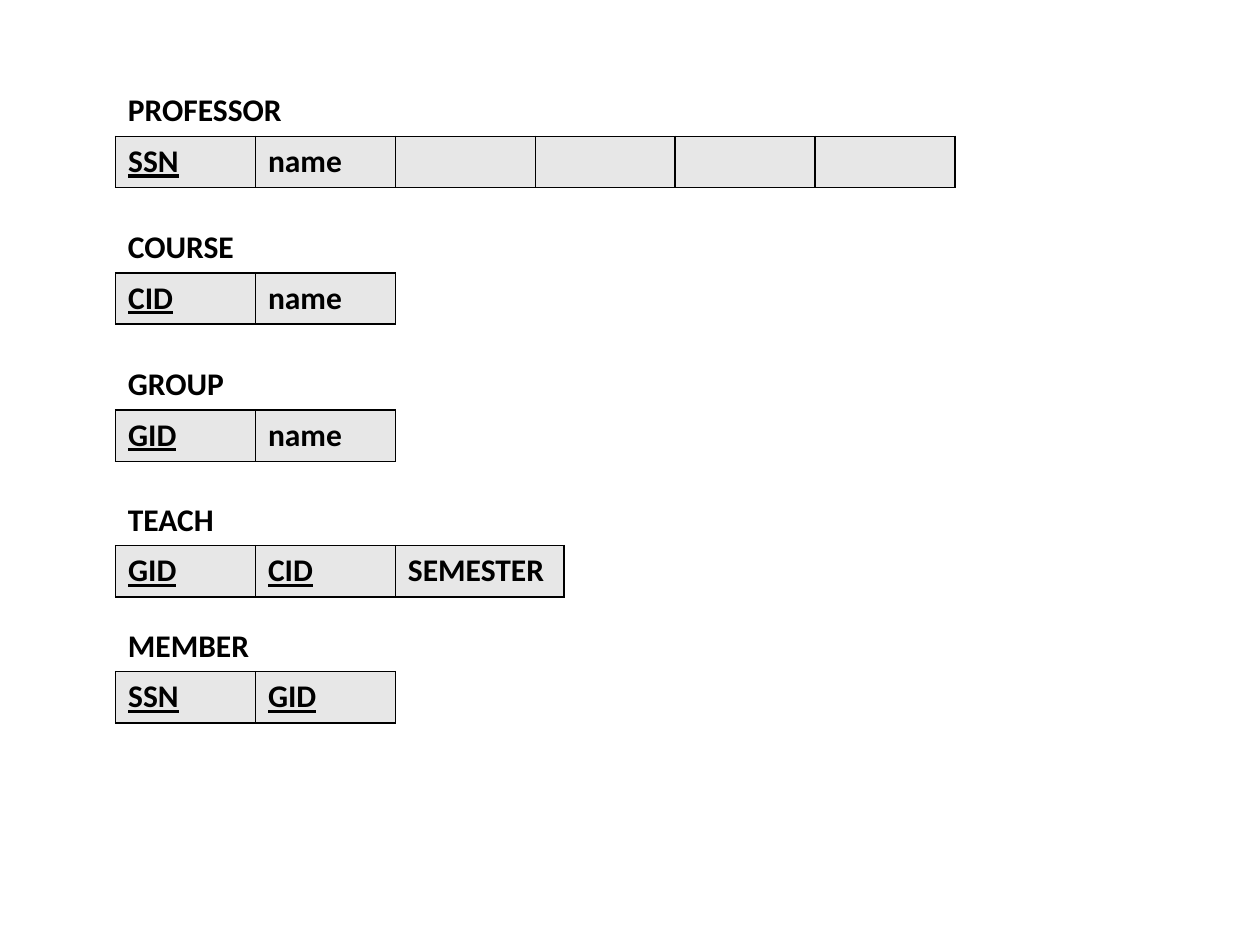
from dataclasses import dataclass

from lxml.etree import SubElement
from pptx import Presentation
from pptx.dml.color import RGBColor
from pptx.enum.text import MSO_AUTO_SIZE
from pptx.oxml.ns import qn
from pptx.util import Cm, Pt


@dataclass(frozen=True)
class Theme:
    font: str = "Calibri"
    size: int = 18
    ink: str = "000000"
    cell: str = "E7E7E7"
    border: float = 1


THEME = Theme()
LEFT = 2.33
LABEL_HEIGHT = 1.02
TABLE_OFFSET = 1.05
ROW_HEIGHT = 1.03
COLUMN = 2.82
WIDE_COLUMN = 3.4

# Name, top, label width, attributes, key attributes, column widths (cm)
RELATIONS = [
    ("PROFESSOR", 1.7, 3.63, ["SSN", "name", "", "", "", ""], {"SSN"}, [COLUMN] * 6),
    ("COURSE", 4.45, 2.67, ["CID", "name"], {"CID"}, [COLUMN] * 2),
    ("GROUP", 7.22, 2.46, ["GID", "name"], {"GID"}, [COLUMN] * 2),
    ("TEACH", 9.95, 2.26, ["GID", "CID", "SEMESTER"], {"GID", "CID"},
     [COLUMN, COLUMN, WIDE_COLUMN]),
    ("MEMBER", 12.49, 2.97, ["SSN", "GID"], {"SSN", "GID"}, [COLUMN] * 2),
]


def write_text(frame, text, size=THEME.size, color=THEME.ink, bold=True, underline=False):
    span = frame.paragraphs[0].add_run()
    span.text = text
    span.font.name = THEME.font
    span.font.size = Pt(size)
    span.font.bold = bold
    span.font.underline = underline
    span.font.color.rgb = RGBColor.from_string(color)


def style_cell(cell):
    """Draw all four borders, then the fill, as the schema orders them."""
    properties = cell._tc.get_or_add_tcPr()
    for side in ("lnL", "lnR", "lnT", "lnB"):
        line = SubElement(properties, qn(f"a:{side}"), w=str(Pt(THEME.border)))
        fill = SubElement(line, qn("a:solidFill"))
        SubElement(fill, qn("a:srgbClr"), val=THEME.ink)
    cell.fill.solid()
    cell.fill.fore_color.rgb = RGBColor.from_string(THEME.cell)


def add_label(page, name, left, top, width):
    box = page.shapes.add_textbox(Cm(left), Cm(top), Cm(width), Cm(LABEL_HEIGHT))
    box.text_frame.word_wrap = False
    box.text_frame.auto_size = MSO_AUTO_SIZE.SHAPE_TO_FIT_TEXT
    write_text(box.text_frame, name)


def add_attributes(page, left, top, attributes, keys, widths):
    """Lay the attributes out in one table row, with the keys underlined."""
    table = page.shapes.add_table(1, len(attributes), Cm(left), Cm(top),
                                  Cm(sum(widths)), Cm(ROW_HEIGHT)).table
    table.first_row = False
    table.horz_banding = False
    for column, width in zip(table.columns, widths):
        column.width = Cm(width)
    for cell, attribute in zip(table.iter_cells(), attributes):
        style_cell(cell)
        if attribute:
            write_text(cell.text_frame, attribute, underline=attribute in keys)


def add_relation(page, left, top, name, label_width, attributes, keys, widths):
    add_attributes(page, left, top + TABLE_OFFSET, attributes, keys, widths)
    add_label(page, name, left, top, label_width)


def main():
    deck = Presentation()
    deck.slide_width, deck.slide_height = Cm(25.4), Cm(19.05)
    page = deck.slides.add_slide(deck.slide_layouts[6])
    for name, top, label_width, attributes, keys, widths in RELATIONS:
        add_relation(page, LEFT, top, name, label_width, attributes, keys, widths)
    deck.save("out.pptx")


if __name__ == "__main__":
    main()
